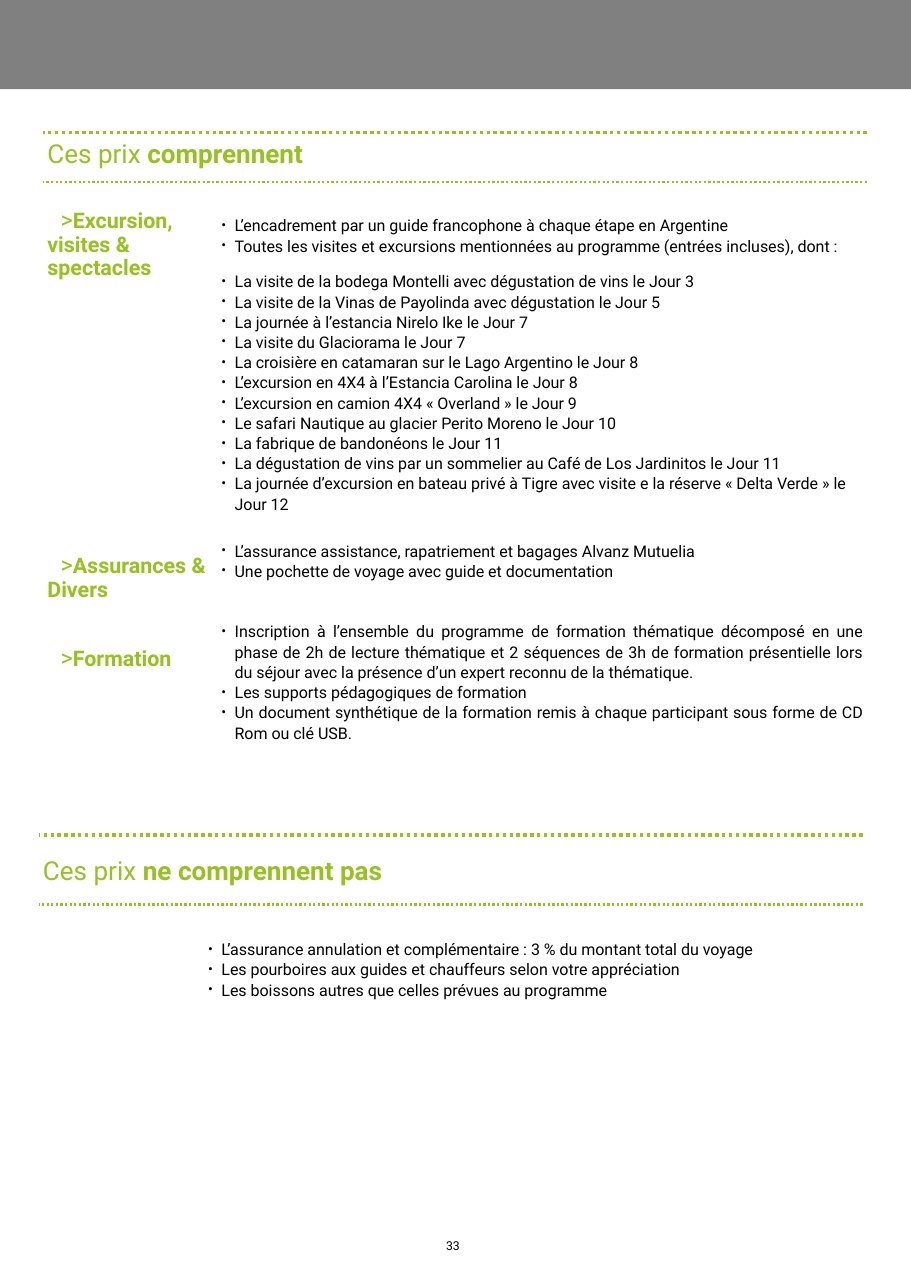
import dataclasses

import pptx
import pptx.dml.color
import pptx.enum.dml
import pptx.enum.shapes
import pptx.enum.text
import pptx.oxml.ns
import pptx.util
from lxml import etree
from pptx.util import Inches

ALIGN = pptx.enum.text.PP_ALIGN
ANCHOR = pptx.enum.text.MSO_ANCHOR


@dataclasses.dataclass(frozen=True)
class Theme:
    font: str = "Roboto"
    green: str = "96C11F"
    black: str = "000000"
    grey: str = "808080"
    heading: float = 17
    label: float = 14
    body: float = 10.5
    folio: float = 8


THEME = Theme()

LABELS = [
    ("Excursion, visites & spectacles", 0),
    ("Assurances & Divers", 180),
    ("Formation", 30.4),
]

INCLUDED = [
    (0, ALIGN.LEFT, [
        "L’encadrement par un guide francophone à chaque étape en Argentine",
        "Toutes les visites et excursions mentionnées au programme (entrées incluses), dont :",
    ]),
    (10.2, ALIGN.LEFT, [
        "La visite de la bodega Montelli avec dégustation de vins le Jour 3",
        "La visite de la Vinas de Payolinda avec dégustation le Jour 5",
        "La journée à l’estancia Nirelo Ike le Jour 7",
        "La visite du Glaciorama le Jour 7",
        "La croisière en catamaran sur le Lago Argentino le Jour 8",
        "L’excursion en 4X4 à l’Estancia Carolina le Jour 8",
        "L’excursion en camion 4X4 « Overland » le Jour 9",
        "Le safari Nautique au glacier Perito Moreno le Jour 10",
        "La fabrique de bandonéons le Jour 11",
        "La dégustation de vins par un sommelier au Café de Los Jardinitos le Jour 11",
        "La journée d’excursion en bateau privé à Tigre avec visite e la réserve « Delta Verde » le Jour 12",
    ]),
    (17.5, ALIGN.LEFT, [
        "L’assurance assistance, rapatriement et bagages Alvanz Mutuelia",
        "Une pochette de voyage avec guide et documentation",
    ]),
    (26.4, ALIGN.JUSTIFY, [
        "Inscription à l’ensemble du programme de formation thématique décomposé en une phase de 2h de lecture "
        "thématique et 2 séquences de 3h de formation présentielle lors du séjour avec la présence d’un expert "
        "reconnu de la thématique.",
        "Les supports pédagogiques de formation",
        "Un document synthétique de la formation remis à chaque participant sous forme de CD Rom ou clé USB.",
    ]),
]

EXCLUDED = [
    (0, ALIGN.LEFT, [
        "L’assurance annulation et complémentaire : 3 % du montant total du voyage",
        "Les pourboires aux guides et chauffeurs selon votre appréciation",
        "Les boissons autres que celles prévues au programme",
    ]),
]


def rgb(color):
    return pptx.dml.color.RGBColor.from_string(color)


def add_run(p, text, size=THEME.body, color=THEME.black, bold=False):
    r = p.add_run()
    r.text = text
    r.font.name = THEME.font
    r.font.size = pptx.util.Pt(size)
    r.font.bold = bold
    r.font.color.rgb = rgb(color)


def add_bullet(p, char, percent, margin, indent):
    pPr = p._p.get_or_add_pPr()
    pPr.set("marL", str(Inches(margin)))
    pPr.set("indent", str(Inches(indent)))
    for tag, key, value in (
        ("a:buSzPct", "val", str(percent * 1000)),
        ("a:buFont", "typeface", THEME.font),
        ("a:buChar", "char", char),
    ):
        etree.SubElement(pPr, pptx.oxml.ns.qn(tag)).set(key, value)


def format_frame(tf, right=0.04, anchor=ANCHOR.TOP, wrap=True):
    tf.auto_size = pptx.enum.text.MSO_AUTO_SIZE.NONE
    tf.word_wrap = wrap
    tf.vertical_anchor = anchor
    tf.margin_left, tf.margin_right = Inches(0.04), Inches(right)
    tf.margin_top = tf.margin_bottom = 0
    return tf


def add_text_frame(s, x, y, w, h, **options):
    box = s.shapes.add_textbox(Inches(x), Inches(y), Inches(w), Inches(h))
    return format_frame(box.text_frame, **options)


def next_paragraph(tf, spacing, gap=0, align=ALIGN.LEFT):
    p = tf.paragraphs[0] if not tf.text else tf.add_paragraph()
    p.alignment = align
    p.line_spacing = spacing
    p.space_before = pptx.util.Pt(gap)
    return p


def fill_heading(tf, ending):
    p = next_paragraph(tf, 0.8)
    add_run(p, "Ces prix ", THEME.heading, THEME.green)
    add_run(p, ending, THEME.heading, THEME.green, bold=True)


def add_labels(s, x, y, w, h):
    tf = add_text_frame(s, x, y, w, h, right=0)
    for text, gap in LABELS:
        p = next_paragraph(tf, 0.9, gap)
        add_bullet(p, ">", 110, 0, 0.12)
        add_run(p, text, THEME.label, THEME.green, bold=True)


def add_bullet_list(s, groups, x, y, w, h):
    tf = add_text_frame(s, x, y, w, h)
    for gap, align, items in groups:
        for i, text in enumerate(items):
            p = next_paragraph(tf, 1.05, 0 if i else gap, align)
            add_bullet(p, "•", 90, 0.12, -0.12)
            add_run(p, text)


def add_dotted_line(s, x, y, width):
    line = s.shapes.add_connector(
        pptx.enum.shapes.MSO_CONNECTOR.STRAIGHT, Inches(x + 7.48), Inches(y), Inches(x), Inches(y))
    line.line.color.rgb = rgb(THEME.green)
    line.line.width = pptx.util.Pt(width)
    line.line.dash_style = pptx.enum.dml.MSO_LINE.ROUND_DOT
    etree.SubElement(line._element.spPr, pptx.oxml.ns.qn("a:effectLst"))


def add_banner(s, w, h):
    banner = s.shapes.add_shape(pptx.enum.shapes.MSO_SHAPE.RECTANGLE, 0, 0, Inches(w), Inches(h))
    banner.shadow.inherit = False
    banner.fill.solid()
    banner.fill.fore_color.rgb = rgb(THEME.grey)
    banner.line.fill.background()


def add_title(s, ending, x, y, w, h):
    title = s.shapes.title
    title.left, title.top, title.width, title.height = Inches(x), Inches(y), Inches(w), Inches(h)
    fill_heading(format_frame(title.text_frame, anchor=ANCHOR.MIDDLE), ending)


def main():
    prs = pptx.Presentation()
    prs.slide_width, prs.slide_height = Inches(8.27), Inches(11.69)
    s = prs.slides.add_slide(prs.slide_layouts[5])

    add_banner(s, 8.27, 0.81)
    add_title(s, "comprennent", 0.39, 1.22, 7.48, 0.39)
    for x, top, bottom in ((0.39, 1.2, 1.65), (0.35, 7.58, 8.21)):
        add_dotted_line(s, x, top, 2.25)
        add_dotted_line(s, x, bottom, 1.5)
    add_labels(s, 0.39, 1.91, 1.5, 4.3)
    add_bullet_list(s, INCLUDED, 1.97, 1.95, 5.91, 4.85)

    fill_heading(add_text_frame(s, 0.35, 7.73, 7.48, 0.39, anchor=ANCHOR.MIDDLE), "ne comprennent pas")
    add_bullet_list(s, EXCLUDED, 1.85, 8.52, 5.98, 0.87)

    folio = add_text_frame(s, 4.01, 11.24, 0.27, 0.13, wrap=False)
    add_run(next_paragraph(folio, 1.0), "33", THEME.folio)
    prs.save("out.pptx")


if __name__ == "__main__":
    main()
